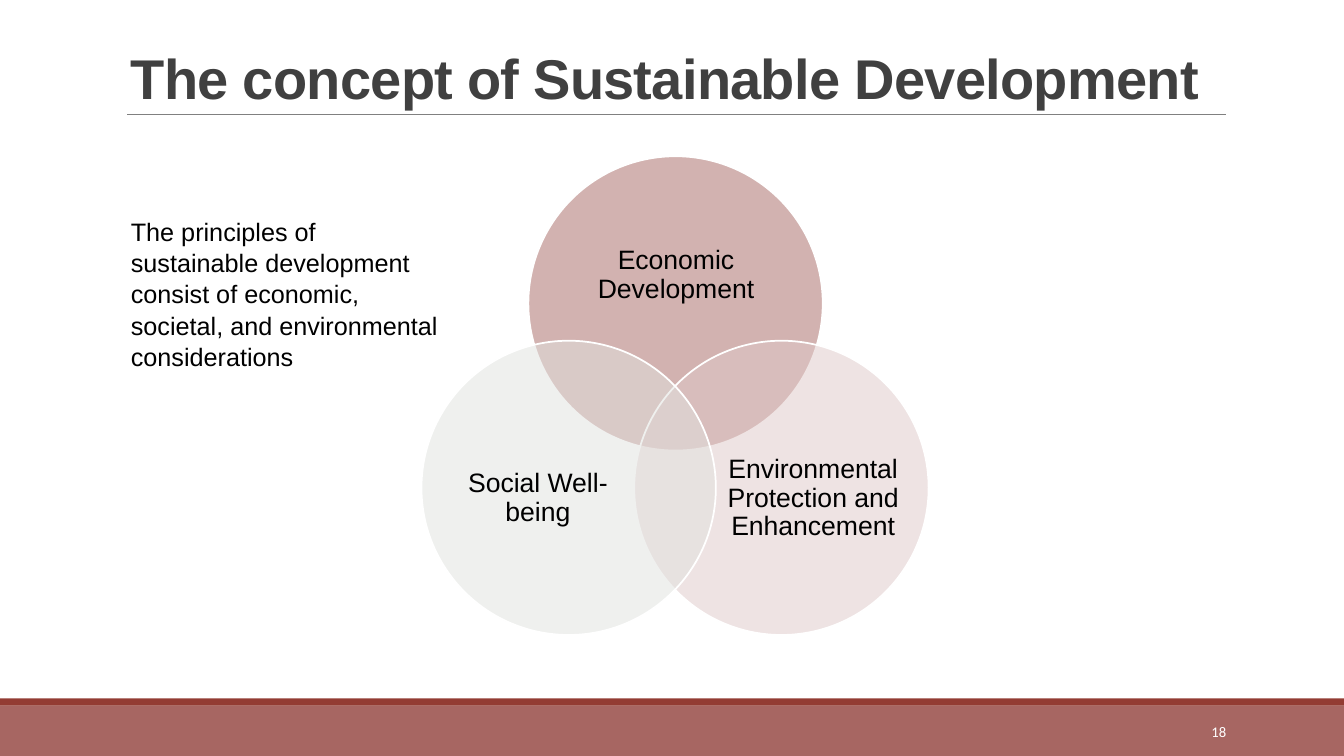
"""Build the slide on the concept of sustainable development."""
from lxml import etree
from pptx import Presentation
from pptx import util as u
from pptx.dml.color import RGBColor
from pptx.enum import shapes, text
from pptx.oxml.ns import qn


def color(value):
    return RGBColor.from_string(value)


def add_text(box, content, size, hue, align, anchor, margin=None, spacing=1.0, font="Arial"):
    shape = slide.shapes.add_textbox(*map(u.Inches, box))
    frame = shape.text_frame
    frame.word_wrap = True
    frame.vertical_anchor = anchor
    if margin is not None:
        frame.margin_left = frame.margin_right = u.Inches(margin)
        frame.margin_top = frame.margin_bottom = u.Inches(margin)
    paragraph = frame.paragraphs[0]
    paragraph.text = content
    paragraph.alignment = align
    paragraph.line_spacing = spacing
    paragraph.font.name = font
    paragraph.font.size = u.Pt(size)
    paragraph.font.color.rgb = color(hue)
    return paragraph


presentation = Presentation()
presentation.slide_width = u.Inches(13.33)
presentation.slide_height = u.Inches(7.5)
slide = presentation.slides.add_slide(presentation.slide_layouts[6])

for top, height, fill in [(7, 0.5, "A76662"), (6.93, 0.07, "933C33")]:
    band = slide.shapes.add_shape(
        shapes.MSO_SHAPE.RECTANGLE, 0, u.Inches(top), presentation.slide_width, u.Inches(height))
    band.shadow.inherit = False
    band.fill.solid()
    band.fill.fore_color.rgb = color(fill)
    band.line.fill.background()

rule = slide.shapes.add_connector(
    shapes.MSO_CONNECTOR.STRAIGHT, u.Inches(1.26), u.Inches(1.13), u.Inches(12.16), u.Inches(1.13))
rule.line.color.rgb = color("808080")
rule.line.width = u.Pt(0.5)
etree.SubElement(rule._element.spPr, qn("a:effectLst"))

title = add_text((1.2, 0.31, 11, 0.84), "The concept of Sustainable Development", 40, "404040",
                 text.PP_ALIGN.LEFT, text.MSO_ANCHOR.BOTTOM, spacing=0.85)
title.font.bold = True
title.runs[0]._r.get_or_add_rPr().set("spc", "-50")

diameter = 2.92
circles = [
    (5.24, 1.55, "A76662", "Economic Development", (5.63, 2.07, 2.15, 1.32)),
    (6.29, 3.38, "DFC9C8", "Environmental Protection and Enhancement", (7.19, 4.14, 1.75, 1.61)),
    (4.18, 3.38, "E1E2DF", "Social Well-being", (4.46, 4.14, 1.75, 1.61)),
]
for left, top, fill, label, label_box in circles:
    circle = slide.shapes.add_shape(
        shapes.MSO_SHAPE.OVAL, u.Inches(left), u.Inches(top), u.Inches(diameter), u.Inches(diameter))
    circle.shadow.inherit = False
    circle.fill.solid()
    circle.fill.fore_color.rgb = color(fill)
    solid_color = circle._element.spPr.find(qn("a:solidFill")).find(qn("a:srgbClr"))
    etree.SubElement(solid_color, qn("a:alpha"), val="50000")
    circle.line.color.rgb = color("FFFFFF")
    circle.line.width = u.Pt(1.25)
    add_text(label_box, label, 19, "000000", text.PP_ALIGN.CENTER, text.MSO_ANCHOR.MIDDLE,
             margin=0, spacing=0.9)

add_text((10.83, 7.06, 1.43, 0.4), "18", 10.5, "FFFFFF", text.PP_ALIGN.RIGHT,
         text.MSO_ANCHOR.MIDDLE, font="Calibri")
add_text((1.2, 2.08, 3.3, 1.62),
         "The principles of sustainable development consist of economic, societal, "
         "and environmental considerations",
         18, "000000", text.PP_ALIGN.LEFT, text.MSO_ANCHOR.TOP, spacing=1.04)

presentation.save("out.pptx")
